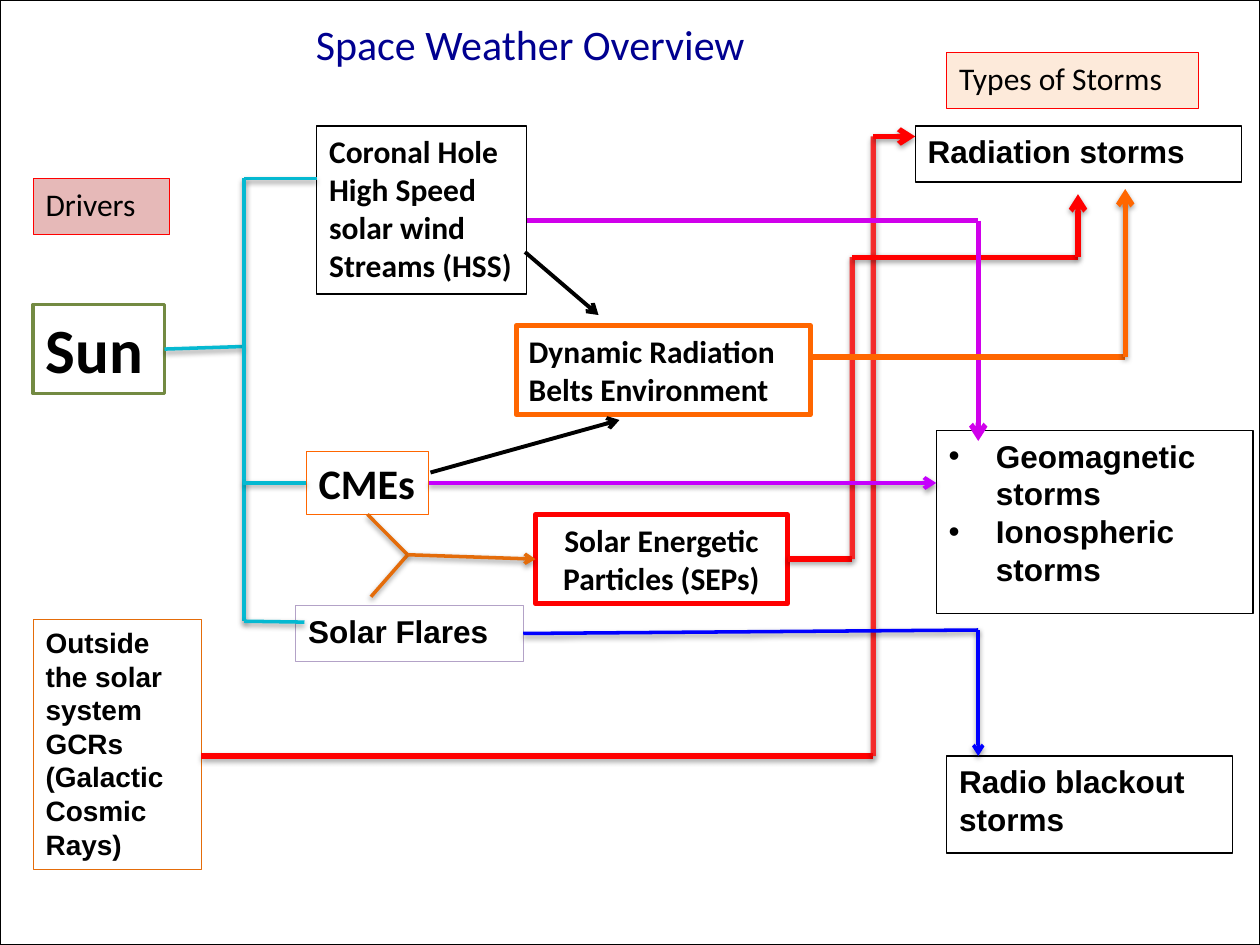
from lxml import etree
from pptx import Presentation
from pptx.dml.color import RGBColor
from pptx.enum.shapes import MSO_CONNECTOR, MSO_SHAPE
from pptx.enum.text import MSO_ANCHOR, MSO_AUTO_SIZE, PP_ALIGN
from pptx.oxml import parse_xml
from pptx.oxml.ns import nsdecls, qn
from pptx.util import Pt

RECTANGLE = MSO_SHAPE.RECTANGLE
STRAIGHT = MSO_CONNECTOR.STRAIGHT
LEFT, CENTER = PP_ALIGN.LEFT, PP_ALIGN.CENTER
TOP, MIDDLE = MSO_ANCHOR.TOP, MSO_ANCHOR.MIDDLE
FIT_SHAPE = MSO_AUTO_SIZE.SHAPE_TO_FIT_TEXT
SIDE_LEFT, SIDE_BOTTOM, SIDE_RIGHT = 1, 2, 3

BLACK, WHITE, RED, ORANGE = "000000", "FFFFFF", "FF0000", "FF6600"
CYAN, RUST, BLUE = "05B9D1", "E46C0A", "0000FF"
VIOLET, MAGENTA = "C500FD", "D000EB"

SHADOW = (
    f'<a:effectLst {nsdecls("a")}><a:outerShdw blurRad="39370" dist="20320" '
    'dir="5400000" rotWithShape="0"><a:srgbClr val="000000">'
    '<a:alpha val="38000"/></a:srgbClr></a:outerShdw></a:effectLst>'
)
NO_SHADOW = f'<a:effectLst {nsdecls("a")}/>'


def rgb(colour):
    return RGBColor.from_string(colour)


def format_text(para, font, size, colour, bold, align):
    para.alignment = align
    for span in para.runs:
        span.font.name = font
        span.font.size = Pt(size)
        span.font.bold = bold
        span.font.color.rgb = rgb(colour)


def add_box(page, left, top, width, height, line, weight=0.75, fill=None):
    box = page.shapes.add_shape(RECTANGLE, Pt(left), Pt(top), Pt(width), Pt(height))
    box.shadow.inherit = False
    if fill:
        box.fill.solid()
        box.fill.fore_color.rgb = rgb(fill)
    else:
        box.fill.background()
    box.line.color.rgb = rgb(line)
    box.line.width = Pt(weight)
    return box


def add_label(page, place, text, line, weight=0.75, fill=None, font="Calibri",
              size=18, bold=True, align=LEFT, wrap=True):
    box = add_box(page, *place, line, weight, fill)
    frame = box.text_frame
    frame.text = text
    frame.word_wrap = wrap
    frame.auto_size = FIT_SHAPE
    frame.vertical_anchor = TOP
    for para in frame.paragraphs:
        format_text(para, font, size, BLACK, bold, align)
    return box


def add_bullets(box, indent):
    for para in box.text_frame.paragraphs:
        settings = para._p.get_or_add_pPr()
        settings.set("marL", str(Pt(indent)))
        settings.set("indent", str(-Pt(indent)))
        etree.SubElement(settings, qn("a:buFont")).set("typeface", "Arial")
        etree.SubElement(settings, qn("a:buChar")).set("char", "•")


def add_route(page, points, colour, weight, arrow=False, shadow=True,
              start=None, end=None, opacity=None):
    last = len(points) - 2
    for index, (begin, finish) in enumerate(zip(points, points[1:])):
        link = page.shapes.add_connector(STRAIGHT, *map(Pt, begin + finish))
        link.line.color.rgb = rgb(colour)
        link.line.width = Pt(weight)
        if opacity and index == 1:
            tint = link.line._ln.find(".//" + qn("a:srgbClr"))
            etree.SubElement(tint, qn("a:alpha")).set("val", str(opacity * 1000))
        if arrow and index == last:
            etree.SubElement(link.line._ln, qn("a:tailEnd")).set("type", "arrow")
        link._element.spPr.append(parse_xml(SHADOW if shadow else NO_SHADOW))
        if start and index == 0:
            link.begin_connect(*start)
        if end and index == last:
            link.end_connect(*end)


def place_frame(page, left, top, width, height):
    border = add_box(page, left, top, width, height, BLACK, 1, WHITE)
    border.element.getparent().insert(2, border.element)


def place_title(page, left, top, width, height):
    title = page.shapes.title
    title.left, title.top = Pt(left), Pt(top)
    title.width, title.height = Pt(width), Pt(height)
    title.text_frame.text = "Space Weather Overview"
    title.text_frame.vertical_anchor = MIDDLE
    format_text(title.text_frame.paragraphs[0], "Calibri", 24, "000090", False, CENTER)


def place_drivers(page, left, top):
    add_label(page, (left, top, 78, 32), "Drivers", RED, fill="E6B9B8", bold=False)
    sun = add_label(page, (left, top + 72, 75, 51), "Sun", "738A42", 2,
                    size=36, wrap=False)
    add_label(page, (left, top + 252, 96, 143),
              "Outside the solar system\nGCRs (Galactic Cosmic Rays)",
              RUST, font="Arial", size=16)
    return {"sun": sun}


def place_events(page, left, top):
    add_label(page, (left + 12, top, 120, 96),
              "Coronal Hole High Speed solar wind Streams (HSS)", BLACK)
    add_label(page, (left + 126, top + 114, 168, 51),
              "Dynamic Radiation Belts Environment", ORANGE, 3)
    ejections = add_label(page, (left + 6, top + 186, 70, 36), "CMEs", ORANGE,
                          size=24, wrap=False)
    particles = add_label(page, (left + 137, top + 222, 144, 51),
                          "Solar Energetic Particles (SEPs)", RED, 3, align=CENTER)
    flares = add_label(page, (left, top + 274, 130, 32), "Solar Flares", "B3A2C7",
                       font="Arial", wrap=False)
    return {"ejections": ejections, "particles": particles, "flares": flares}


def place_storms(page, left, top):
    add_label(page, (left + 18, top, 144, 32), "Types of Storms", RED,
              fill="FDEADA", bold=False)
    add_label(page, (left, top + 42, 186.5, 32), "Radiation storms", BLACK,
              fill=WHITE, font="Arial")
    magnetic = add_label(page, (left + 12, top + 216, 181, 104.5),
                         "Geomagnetic storms\nIonospheric storms", BLACK, font="Arial")
    add_bullets(magnetic, 27)
    add_label(page, (left + 18, top + 402, 163.5, 55.5), "Radio blackout storms",
              BLACK, fill=WHITE, font="Arial")


def place_links(page, parts):
    sun, ejections = parts["sun"], parts["ejections"]
    particles, flares = parts["particles"], parts["flares"]

    add_route(page, [(94, 199.5), (139, 198)], CYAN, 2, start=(sun, SIDE_RIGHT))
    add_route(page, [(181, 102), (139.5, 102), (139.5, 355), (174, 355.5)], CYAN, 2)
    add_route(page, [(139, 276), (175, 276)], CYAN, 2, end=(ejections, SIDE_LEFT))

    add_route(page, [(115, 432), (499, 432), (499, 78), (523, 78)], RED, 3,
              arrow=True, opacity=78)
    add_route(page, [(450, 319.5), (487, 319.5), (487, 147), (616, 147), (616, 111)],
              RED, 3, arrow=True, start=(particles, SIDE_RIGHT), opacity=80)
    add_route(page, [(299, 362), (559, 360), (559, 432)], BLUE, 2,
              arrow=True, start=(flares, SIDE_RIGHT))

    fork = (233, 317)
    add_route(page, [(210, 294), fork], RUST, 2, start=(ejections, SIDE_BOTTOM))
    add_route(page, [(212, 341), fork], RUST, 2)
    add_route(page, [fork, (306, 319.5)], RUST, 2, arrow=True,
              end=(particles, SIDE_LEFT))

    add_route(page, [(245, 276), (535, 276)], VIOLET, 2.25, arrow=True,
              start=(ejections, SIDE_RIGHT))
    add_route(page, [(301, 126), (559, 126), (559, 252)], MAGENTA, 3,
              arrow=True, shadow=False)
    add_route(page, [(463, 204), (643, 204)], ORANGE, 3, shadow=False)
    add_route(page, [(643, 204), (643, 108)], ORANGE, 3, arrow=True)
    add_route(page, [(300, 144), (342, 180)], BLACK, 2.25, arrow=True, shadow=False)
    add_route(page, [(246, 270), (354, 240)], BLACK, 2.25, arrow=True, shadow=False)


def main():
    deck = Presentation()
    deck.slide_width, deck.slide_height = Pt(720), Pt(540)
    page = deck.slides.add_slide(deck.slide_layouts.get_by_name("Title Only"))
    place_frame(page, 0, 0, 720, 540)
    place_title(page, 150, 12, 306, 26)
    parts = place_drivers(page, 19, 102)
    parts.update(place_events(page, 169, 72))
    place_storms(page, 523, 30)
    place_links(page, parts)
    deck.save("out.pptx")


if __name__ == "__main__":
    main()
